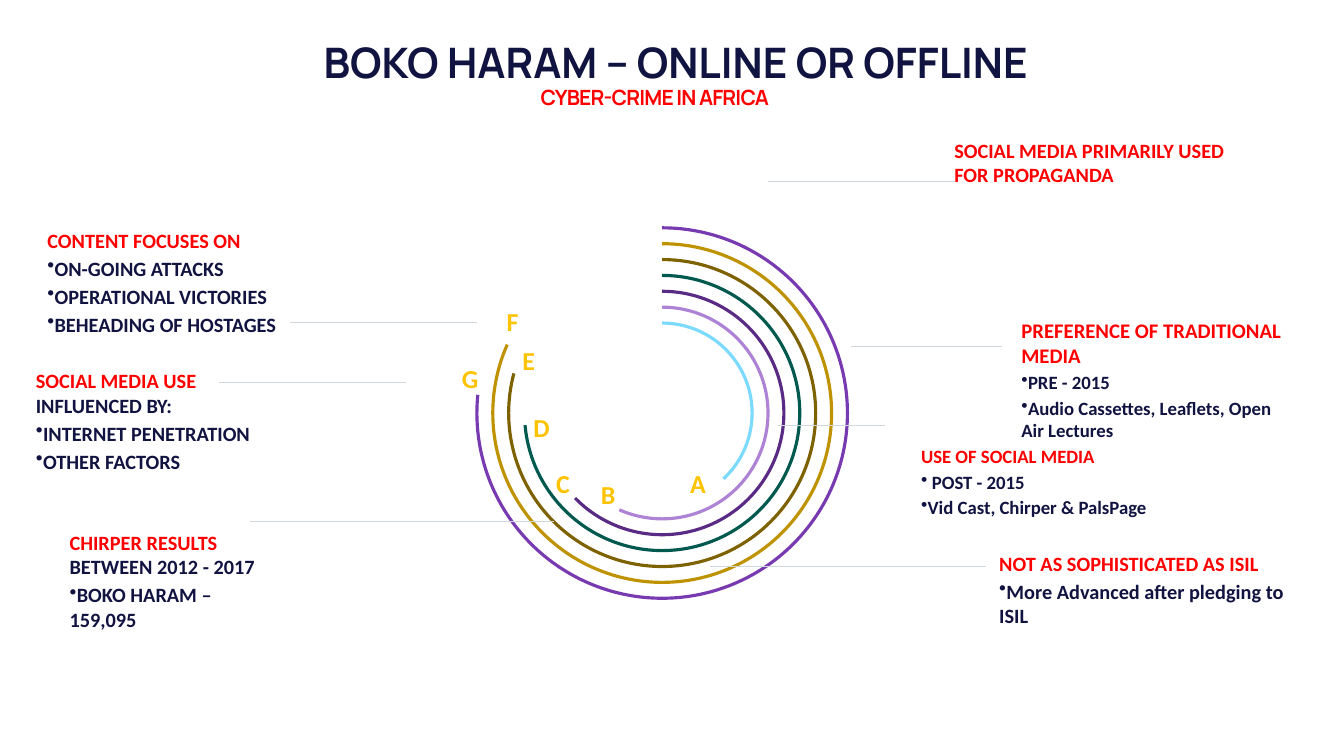
from lxml import etree
from pptx import Presentation
from pptx.dml.color import RGBColor
from pptx.enum.shapes import MSO_CONNECTOR, MSO_SHAPE
from pptx.enum.text import MSO_ANCHOR, MSO_AUTO_SIZE, PP_ALIGN
from pptx.oxml.ns import qn
from pptx.util import Inches, Pt

ARC, STRAIGHT = MSO_SHAPE.ARC, MSO_CONNECTOR.STRAIGHT
CENTER, LEFT = PP_ALIGN.CENTER, PP_ALIGN.LEFT
TOP, NO_FIT = MSO_ANCHOR.TOP, MSO_AUTO_SIZE.NONE

NAVY = RGBColor(0x11, 0x13, 0x40)
RED = RGBColor(0xFF, 0x00, 0x00)
GOLD = RGBColor(0xFD, 0xC3, 0x00)
GREY = RGBColor(0xCF, 0xD6, 0xDC)
SKY = RGBColor(0x7B, 0xDA, 0xFE)
LILAC = RGBColor(0xAE, 0x83, 0xD6)
PLUM = RGBColor(0x5A, 0x2B, 0x85)
TEAL = RGBColor(0x00, 0x59, 0x4E)
OLIVE = RGBColor(0x7E, 0x62, 0x00)
MUSTARD = RGBColor(0xBE, 0x92, 0x00)
VIOLET = RGBColor(0x78, 0x3A, 0xB1)

# Grid of square cells; all places below are in columns and rows
COLS, ROWS = 26.66, 15
CELL = Inches(1)

# Innermost ring first: colour, end angle, letter, letter offset from ring box
RINGS = [
    (SKY, 47, "A", (3.96, 4.63)),
    (LILAC, 113.85, "B", (2.19, 4.85)),
    (PLUM, 135.66, "C", (1.3, 4.63)),
    (TEAL, 174.93, "D", (0.85, 3.52)),
    (OLIVE, 194.97, "E", (0.63, 2.18)),
    (MUSTARD, 203.84, "F", (0.32, 1.42)),
    (VIOLET, 185.64, "G", (-0.57, 2.54)),
]

# Box, red heading, navy rest of heading, bullets, heading size, bullet size,
# leader line relative to the box (start x, end x, y)
CALLOUTS = [
    ((19.99, 6.17, 5.78, 2.62), "PREFERENCE OF TRADITIONAL MEDIA", "",
     ["PRE - 2015", "Audio Cassettes, Leaflets, Open Air Lectures"],
     29.6, 26.8, (-0.11, -3.11, 0.7)),
    ((18.66, 2.61, 6.66, 2.31), "SOCIAL MEDIA PRIMARILY USED FOR PROPAGANDA", "",
     [], 29, 29, (0.28, -3.43, 0.98)),
    ((18, 8.69, 5.03, 2.14), "USE OF SOCIAL MEDIA", "",
     [" POST - 2015", "Vid Cast, Chirper & PalsPage"],
     26.8, 26.8, (-0.45, -2.56, -0.25)),
    ((0.67, 4.39, 6.08, 2.48), "CONTENT FOCUSES ON", "",
     ["ON-GOING ATTACKS", "OPERATIONAL VICTORIES", "BEHEADING OF HOSTAGES"],
     29, 29, (8.79, 5.08, 2)),
    ((0.44, 7.18, 5.68, 2.48), "SOCIAL MEDIA USE ", "INFLUENCED BY:",
     ["INTERNET PENETRATION", "OTHER FACTORS"],
     29, 29, (7.61, 3.9, 0.4)),
    ((19.55, 10.8, 6.66, 2.48), "NOT AS SOPHISTICATED AS ISIL", "",
     ["More Advanced after pledging to ISIL"],
     29, 29, (0, -5.47, 0.44)),
    ((1.11, 10.39, 4.35, 2.48), "CHIRPER RESULTS ", "BETWEEN 2012 - 2017",
     ["BOKO HARAM – 159,095"],
     29, 29, (9.87, 3.84, -0.04)),
]


def grid(*cells):
    return [round(c * CELL) for c in cells]


def add_run(p, text, size=29, color=NAVY, font="Calibri", spacing=None):
    r = p.add_run()
    r.text = text
    r.font.name, r.font.size, r.font.bold = font, Pt(size), True
    r.font.color.rgb = color
    if spacing is not None:
        r.font._element.set("spc", str(spacing))
    return r


def add_box(slide, box, margins=(0.27, 0.13)):
    tf = slide.shapes.add_textbox(*grid(*box)).text_frame
    tf.word_wrap = True
    tf.margin_left = tf.margin_right = Inches(margins[0])
    tf.margin_top = tf.margin_bottom = Inches(margins[1])
    return tf


def add_bullet(tf, text, size):
    p = tf.add_paragraph()
    pPr = p._p.get_or_add_pPr()
    pPr.set("marL", "0")
    pPr.set("indent", "0")
    etree.SubElement(pPr, qn("a:buChar")).set("char", "•")
    p.space_before = Pt(round(size * 0.18, 1))
    add_run(p, text, size=size)


def add_heading(slide, box):
    x, y, w, h = box
    # Title
    title = slide.shapes.title
    title.left, title.top, title.width, title.height = grid(x, y, w, h)
    tf = title.text_frame
    tf.word_wrap, tf.auto_size, tf.vertical_anchor = False, NO_FIT, TOP
    p = tf.paragraphs[0]
    p.alignment = CENTER
    add_run(p, "BOKO HARAM – ONLINE OR OFFLINE", size=60, font="Manrope")
    # Subtitle
    tf = add_box(slide, (x - 0.45, y + 0.88, w + 0.07, 0.66), margins=(0.1, 0.05))
    p = tf.paragraphs[0]
    p.alignment, p.line_spacing = CENTER, Pt(42)
    add_run(p, "CYBER-CRIME IN AFRICA", size=30, color=RED, font="Manrope",
            spacing=-120)


def add_rings(slide, box, step=0.315):
    x, y, w, h = box
    for i, (color, end, letter, (dx, dy)) in enumerate(RINGS):
        inset = step * (len(RINGS) - 1 - i)
        sp = slide.shapes.add_shape(
            ARC, *grid(x + inset, y + inset, w - 2 * inset, h - 2 * inset))
        # Angles are stored in 60,000ths of a degree, adjustments in 100,000ths
        sp.adjustments[0], sp.adjustments[1] = 270 * 0.6, end * 0.6
        sp.fill.background()
        sp.line.color.rgb, sp.line.width = color, Pt(4.5)
        sp.shadow.inherit = False
        tf = add_box(slide, (x + dx, y + dy, 1.33, 0.89))
        add_run(tf.paragraphs[0], letter, size=37, color=GOLD)


def add_callout(slide, box, heading, rest, bullets, head_size, size, leader):
    x, y = box[:2]
    start, end, dy = leader
    # Leader line
    line = slide.shapes.add_connector(
        STRAIGHT, *grid(x + start, y + dy, x + end, y + dy))
    line.line.color.rgb, line.line.width = GREY, Pt(1)
    etree.SubElement(line._element.spPr, qn("a:effectLst"))
    # Text
    tf = add_box(slide, box)
    p = tf.paragraphs[0]
    p.alignment = LEFT
    add_run(p, heading, size=head_size, color=RED)
    if rest:
        add_run(p, rest, size=head_size)
    for text in bullets:
        add_bullet(tf, text, size)


def main():
    prs = Presentation()
    prs.slide_width, prs.slide_height = grid(COLS, ROWS)
    slide = prs.slides.add_slide(prs.slide_layouts.get_by_name("Title Only"))
    add_rings(slide, (9.46, 4.52, 7.35, 7.35))
    for callout in CALLOUTS:
        add_callout(slide, *callout)
    add_heading(slide, (5.96, 0.67, 14.89, 1.11))
    prs.save("out.pptx")


if __name__ == "__main__":
    main()
